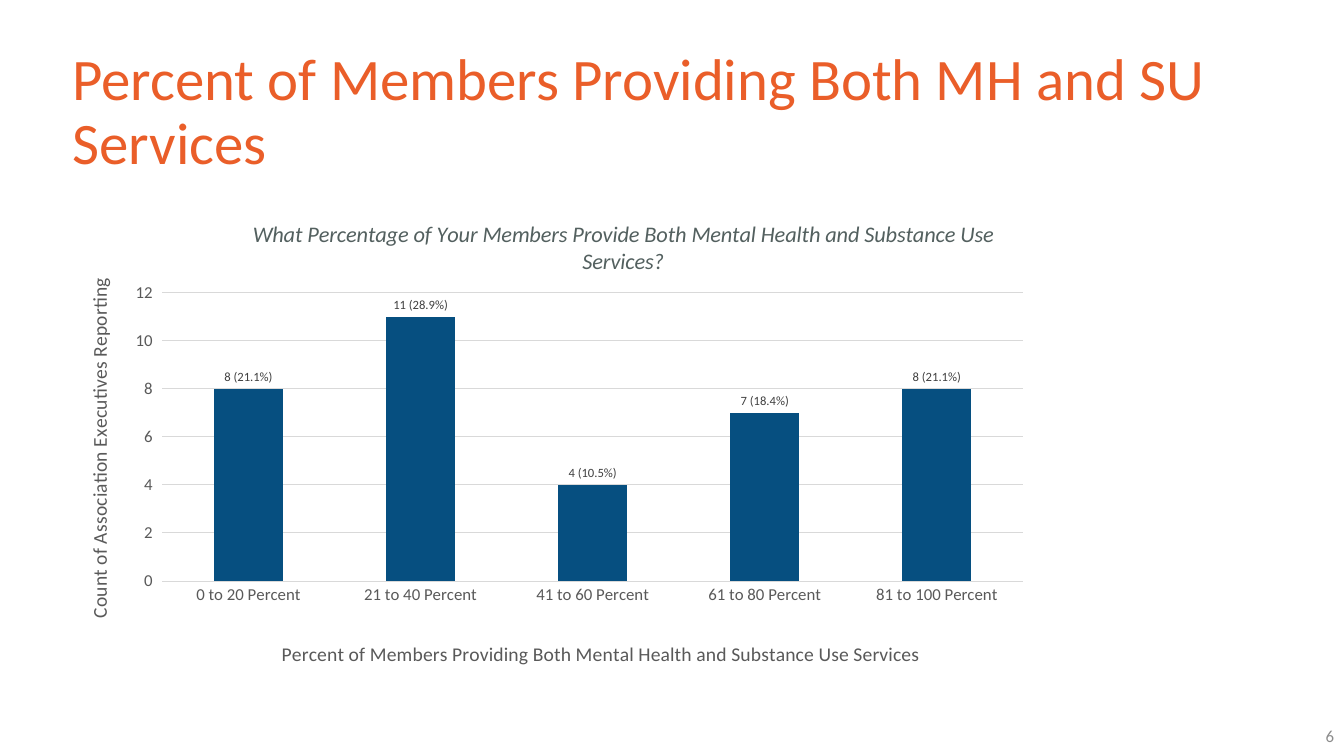
from dataclasses import dataclass

from pptx import Presentation
from pptx.chart.data import CategoryChartData
from pptx.dml.color import RGBColor
from pptx.enum.chart import XL_CHART_TYPE as ChartType
from pptx.enum.chart import XL_LABEL_POSITION as LabelPosition
from pptx.enum.chart import XL_TICK_MARK as TickMark
from pptx.enum.text import MSO_ANCHOR as Anchor
from pptx.enum.text import PP_ALIGN as Align
from pptx.oxml import parse_xml
from pptx.oxml.ns import nsdecls, qn
from pptx.util import Inches, Pt


@dataclass(frozen=True)
class Theme:
    font: str = "Calibri"
    heading: str = "EA5E29"
    page_number: str = "8C8C8C"
    chart_title: str = "53605F"
    axis_text: str = "595959"
    label_text: str = "404040"
    grid: str = "D9D9D9"
    bar: str = "064F80"
    heading_size: int = 42
    chart_title_size: int = 16
    axis_title_size: int = 14
    tick_size: int = 12
    label_size: int = 9


class SlideBuilder:
    def __init__(self, slide, theme):
        self.slide = slide
        self.theme = theme

    def style(self, font, size, color, italic=False):
        font.name = self.theme.font
        font.size = Pt(size)
        font.bold = False
        font.italic = italic
        font.color.rgb = RGBColor.from_string(color)

    def text(self, words, box, size, color, align=Align.LEFT, spacing=1.0):
        shape = self.slide.shapes.add_textbox(*map(Inches, box))
        frame = shape.text_frame
        frame.word_wrap = True
        frame.vertical_anchor = Anchor.MIDDLE
        paragraph = frame.paragraphs[0]
        paragraph.text = words
        paragraph.alignment = align
        paragraph.line_spacing = spacing
        self.style(paragraph.font, size, color)

    def place(self, element, index, **fractions):
        """Fix a chart part at fractions of the chart's size."""
        for layout in element.findall(qn("c:layout")):
            element.remove(layout)
        target = '<c:layoutTarget val="inner"/>' if "w" in fractions else ""
        modes = "".join(f'<c:{key}Mode val="edge"/>' for key in "xy")
        values = "".join(f'<c:{key} val="{value}"/>' for key, value in fractions.items())
        element.insert(index, parse_xml(
            f'<c:layout {nsdecls("c")}><c:manualLayout>{target}{modes}{values}'
            "</c:manualLayout></c:layout>"))

    def title(self, owner, words, size, color, italic=False):
        paragraph = owner.text_frame.paragraphs[0]
        paragraph.text = words
        self.style(paragraph.font, size, color, italic)

    def line(self, line_format):
        line_format.color.rgb = RGBColor.from_string(self.theme.grid)
        line_format.width = Pt(0.75)

    def column_chart(self, box, title, category_title, value_title, bars):
        theme = self.theme
        data = CategoryChartData()
        data.categories = [category for category, _, _ in bars]
        data.add_series("Series 1", [value for _, value, _ in bars])
        chart = self.slide.shapes.add_chart(
            ChartType.COLUMN_CLUSTERED, *map(Inches, box), data).chart
        chart.font.name = theme.font
        chart.has_legend = False
        chart.has_title = True
        self.title(chart.chart_title, title, theme.chart_title_size, theme.chart_title, True)

        # Axes
        category_axis, value_axis = chart.category_axis, chart.value_axis
        for axis, words in ((category_axis, category_title), (value_axis, value_title)):
            self.title(axis.axis_title, words, theme.axis_title_size, theme.axis_text)
            self.style(axis.tick_labels.font, theme.tick_size, theme.axis_text)
            axis.major_tick_mark = TickMark.NONE
        self.line(category_axis.format.line)
        value_axis.major_tick_mark = TickMark.OUTSIDE
        value_axis.format.line.fill.background()
        value_axis.minimum_scale, value_axis.maximum_scale = 0, 12
        value_axis.major_unit = 2
        self.line(value_axis.major_gridlines.format.line)

        # Bars and their labels
        plot = chart.plots[0]
        plot.gap_width = 150
        plot.vary_by_categories = False
        series = plot.series[0]
        series.format.fill.solid()
        series.format.fill.fore_color.rgb = RGBColor.from_string(theme.bar)
        for index, (_, value, share) in enumerate(bars):
            label = series.points[index].data_label
            self.title(label, f"{value} ({share}%)", theme.label_size, theme.label_text)
            label.position = LabelPosition.OUTSIDE_END

        # Positions inside the chart
        root = chart.element
        for query, index, fractions in (
                ("c:chart/c:title", 1, dict(x=0.19, y=0.04)),
                (".//c:catAx/c:title", 1, dict(x=0.22, y=0.93)),
                (".//c:valAx/c:title", 1, dict(x=0.02, y=0.17)),
                ("c:chart/c:plotArea", 0, dict(x=0.102, y=0.205, w=0.878, h=0.608))):
            self.place(root.xpath(query)[0], index, **fractions)


def main():
    theme = Theme()
    presentation = Presentation()
    presentation.slide_width = Inches(13.33)
    presentation.slide_height = Inches(7.5)
    slide = presentation.slides.add_slide(presentation.slide_layouts[6])
    builder = SlideBuilder(slide, theme)

    # Heading and page number
    builder.text("Percent of Members Providing Both MH and SU Services",
                 (0.62, 0.4, 12.1, 1.45), theme.heading_size, theme.heading, spacing=0.9)
    builder.text("6", (10.33, 7.1, 3, 0.4), theme.tick_size, theme.page_number, Align.RIGHT)

    # Survey answers: category, count, share in percent
    builder.column_chart(
        (0.62, 1.94, 9.72, 4.73),
        "What Percentage of Your Members Provide Both Mental Health and "
        "Substance Use Services?",
        "Percent of Members Providing Both Mental Health and Substance Use Services",
        "Count of Association Executives Reporting",
        [("0 to 20 Percent", 8, 21.1),
         ("21 to 40 Percent", 11, 28.9),
         ("41 to 60 Percent", 4, 10.5),
         ("61 to 80 Percent", 7, 18.4),
         ("81 to 100 Percent", 8, 21.1)])

    presentation.save("out.pptx")


if __name__ == "__main__":
    main()
